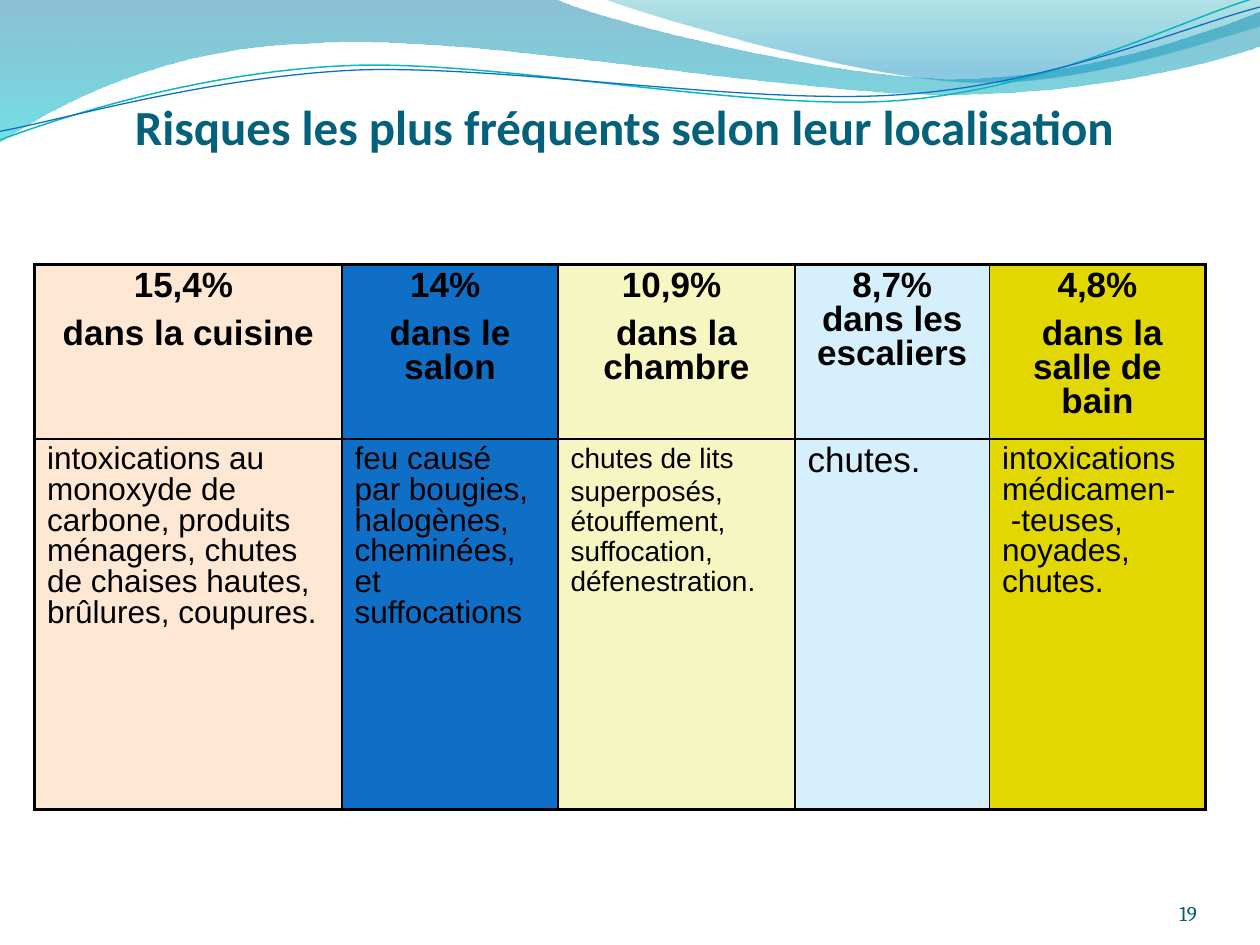
"""Build a slide with a table of the most frequent home risks by room."""
from math import cos, radians, sin
from lxml.etree import SubElement
from pptx import Presentation
from pptx.dml.color import RGBColor
from pptx.enum.text import MSO_ANCHOR, PP_ALIGN
from pptx.oxml.ns import qn
from pptx.util import Pt

BLACK = RGBColor(0x00, 0x00, 0x00)
TITLE_COLOR = RGBColor(0x04, 0x61, 0x7B)
NUMBER_COLOR = RGBColor(0x04, 0x5D, 0x75)
PEACH = RGBColor(0xFE, 0xE8, 0xD4)
BLUE = RGBColor(0x0F, 0x6F, 0xC6)
CREAM = RGBColor(0xF5, 0xF6, 0xC2)
SKY = RGBColor(0xD6, 0xEF, 0xFC)
YELLOW = RGBColor(0xE2, 0xD7, 0x00)
TEAL = RGBColor(0x0A, 0xB8, 0xBF)
WAVE_TOP = RGBColor(0x00, 0x74, 0xA1)
WAVE_BOTTOM = RGBColor(0x00, 0xC6, 0xCF)
CREST_TOP = RGBColor(0x00, 0xA1, 0xA9)
CREST_BOTTOM = RGBColor(0x00, 0x8B, 0xBF)

TITLE = "Risques les plus fréquents selon leur localisation"
PAGE_NUMBER = "19"

ROOMS = [
    (175.75, PEACH, ["15,4% ", "dans la cuisine"],
     [("intoxications au monoxyde de carbone, produits ménagers, chutes de "
       "chaises hautes, brûlures, coupures.", 18)]),
    (123.4, BLUE, ["14% ", "dans le salon"],
     [("feu causé par bougies, halogènes, cheminées, et suffocations", 18)]),
    (135.4, CREAM, ["10,9% ", "dans la chambre"],
     [("chutes de lits superposés,", 16), (" ", 18),
      ("étouffement, suffocation, défenestration.", 16)]),
    (111.2, SKY, ["8,7% dans les escaliers"], [("chutes.", 20)]),
    (123.4, YELLOW, ["4,8%", " dans la salle de bain"],
     [("intoxications médicamen-\n -teuses, noyades, chutes.", 18)]),
]
MIXED_SIZE_SPACING = (0.95, 8.9, 8.9)
PLAIN_SPACING = (0.87, 8, 0)
ROW_HEIGHTS = [99.8, 211.7]
TABLE_LEFT, TABLE_TOP = 19.75, 151
OUTER_BORDER, INNER_BORDER = 2.25, 1

WAVES = [
    ([(0, 0), [(317, -0.7)],
      [(343, 12), (478, 45), (546, 45)], [(614, 45), (690, 19), (720, 6.5)],
      [(720.7, 26)], [(708, 32), (626, 55), (537, 54)],
      [(448, 54), (275, 20), (185, 24.5)], [(93, 26), (33, 60), (-0.7, 81.4)],
      [(0, 0)]],
     [(0, WAVE_TOP, 45), (1, WAVE_BOTTOM, 55)]),
    ([(345, -0.7), [(366, 8), (491, 45), (554, 47)],
      [(616, 49.7), (692, 23), (720, 15)], [(720, 0)], [(345, -0.7)]],
     [(0, CREST_TOP, 30), (0.8, CREST_BOTTOM, 45)]),
]
STRANDS = [
    ([(0, 80), [(34.5, 67), (114, 41), (199, 37.5)],
      [(284, 34), (427, 64), (513, 57.5)], [(600, 51), (675, 11), (718.5, -1.5)]],
     TEAL, 0.85),
    ([(0, 75), [(34, 69), (118, 44), (204, 40)],
      [(290, 37), (430, 60.5), (516, 54)], [(602, 48), (677.5, 15), (720, 4)]],
     BLUE, 0.75),
]
STRAND_ROTATION = -2.7
STRAND_CENTER = (359.5, 42)


def add_outline(slide, outline, closed):
    """Draw a start point followed by straight and cubic segments."""
    start, *segments = outline
    points = [point for segment in segments for point in segment]
    builder = slide.shapes.build_freeform(Pt(start[0]), Pt(start[1]))
    builder.add_line_segments([(Pt(x), Pt(y)) for x, y in points], close=closed)
    shape = builder.convert_to_shape()
    shape.shadow.inherit = False
    lines = iter(shape.element.xpath(".//a:lnTo"))
    for segment in segments:
        first, *others = [next(lines) for _ in segment]
        if others:
            first.tag = qn("a:cubicBezTo")
            for line in others:
                first.append(line[0])
                line.getparent().remove(line)
    return shape


def add_wave(slide, outline, stops):
    """Draw a closed wave with a translucent vertical gradient."""
    shape = add_outline(slide, outline, True)
    shape.line.fill.background()
    shape.fill.gradient()
    shape.fill.gradient_angle = 270
    for gradient_stop, (position, color, _) in zip(shape.fill.gradient_stops, stops):
        gradient_stop.position = position
        gradient_stop.color.rgb = color
    colors = shape.element.spPr.xpath("./a:gradFill//a:srgbClr")
    for color_element, (_, _, opacity) in zip(colors, stops):
        SubElement(color_element, qn("a:alpha"), val=str(opacity * 1000))


def level(point):
    """Turn a point back around the centre of the strands."""
    angle = radians(-STRAND_ROTATION)
    x, y = point[0] - STRAND_CENTER[0], point[1] - STRAND_CENTER[1]
    return (STRAND_CENTER[0] + x * cos(angle) - y * sin(angle),
            STRAND_CENTER[1] + x * sin(angle) + y * cos(angle))


def add_strand(slide, outline, color, width):
    """Draw an open, slightly rotated curved line."""
    start, *segments = outline
    leveled = [level(start)] + [[level(point) for point in segment] for segment in segments]
    shape = add_outline(slide, leveled, False)
    shape.rotation = STRAND_ROTATION
    shape.fill.background()
    shape.line.color.rgb = color
    shape.line.width = Pt(width)


def add_run(paragraph, text, size, font, color, bold=False):
    """Append formatted text, with a line break at each newline."""
    for index, line in enumerate(text.split("\n")):
        if index:
            paragraph.add_line_break()
        run = paragraph.add_run()
        run.text = line
        run.font.size = Pt(size)
        run.font.name = font
        run.font.bold = bold
        run.font.color.rgb = color


def add_label(slide, box, text, size, font, color, alignment, bold=False):
    """Add a one-line text box anchored at its bottom."""
    shape = slide.shapes.add_textbox(*map(Pt, box))
    frame = shape.text_frame
    frame.word_wrap = True
    frame.vertical_anchor = MSO_ANCHOR.BOTTOM
    frame.margin_left = frame.margin_right = frame.margin_top = frame.margin_bottom = 0
    paragraph = frame.paragraphs[0]
    paragraph.alignment = alignment
    add_run(paragraph, text, size, font, color, bold)


def style_cell(cell, color, widths):
    """Set the borders and the fill of a cell."""
    properties = cell._tc.get_or_add_tcPr()
    for side, width in zip("LRTB", widths):
        border = SubElement(properties, qn(f"a:ln{side}"), w=str(Pt(width)))
        fill = SubElement(border, qn("a:solidFill"))
        SubElement(fill, qn("a:srgbClr"), val=str(BLACK))
    cell.fill.solid()
    cell.fill.fore_color.rgb = color


def write_cell(cell, paragraphs, alignment, bold, spacing):
    """Write paragraphs, each a list of text and size pairs."""
    line_spacing, before, after = spacing
    frame = cell.text_frame
    for index, runs in enumerate(paragraphs):
        paragraph = frame.add_paragraph() if index else frame.paragraphs[0]
        paragraph.alignment = alignment
        paragraph.line_spacing = line_spacing
        paragraph.space_before = Pt(before)
        paragraph.space_after = Pt(after)
        for text, size in runs:
            add_run(paragraph, text, size, "Arial", BLACK, bold)


def add_risk_table(slide):
    """Add the table with one column for each room."""
    table = slide.shapes.add_table(
        len(ROW_HEIGHTS), len(ROOMS), Pt(TABLE_LEFT), Pt(TABLE_TOP),
        Pt(sum(room[0] for room in ROOMS)), Pt(sum(ROW_HEIGHTS))).table
    table.first_row = table.horz_banding = False
    for row, height in zip(table.rows, ROW_HEIGHTS):
        row.height = Pt(height)
    last_row, last_column = len(ROW_HEIGHTS) - 1, len(ROOMS) - 1
    for column, (width, color, heading, risks) in enumerate(ROOMS):
        table.columns[column].width = Pt(width)
        for row in range(len(ROW_HEIGHTS)):
            edges = (column == 0, column == last_column, row == 0, row == last_row)
            style_cell(table.cell(row, column), color,
                       [OUTER_BORDER if edge else INNER_BORDER for edge in edges])
        write_cell(table.cell(0, column), [[(line, 20)] for line in heading],
                   PP_ALIGN.CENTER, True, PLAIN_SPACING)
        write_cell(table.cell(1, column), [risks], PP_ALIGN.LEFT, False,
                   MIXED_SIZE_SPACING if len(risks) > 1 else PLAIN_SPACING)


presentation = Presentation()
presentation.slide_width, presentation.slide_height = Pt(720), Pt(540)
slide = presentation.slides.add_slide(presentation.slide_layouts[6])
for wave in WAVES:
    add_wave(slide, *wave)
for strand in STRANDS:
    add_strand(slide, *strand)
add_label(slide, (516, 492, 168, 37), PAGE_NUMBER, 12, "Cambria", NUMBER_COLOR,
          PP_ALIGN.RIGHT)
add_label(slide, (36, 10, 641.5, 78.5), TITLE, 28, "Calibri", TITLE_COLOR,
          PP_ALIGN.CENTER, True)
add_risk_table(slide)
presentation.save("out.pptx")
